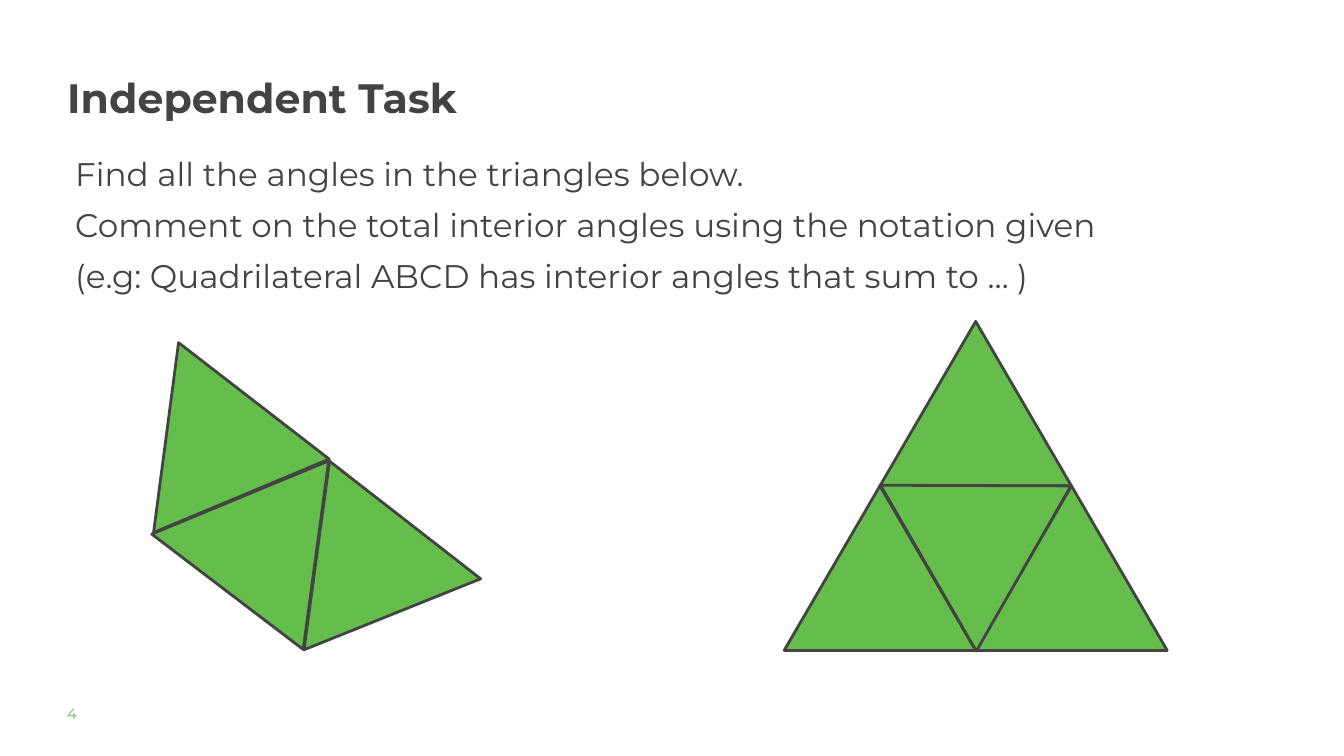
import dataclasses

import pptx
import pptx.dml.color
import pptx.enum.shapes
import pptx.util

Cm = pptx.util.Cm
Pt = pptx.util.Pt
RGB = pptx.dml.color.RGBColor


@dataclasses.dataclass(frozen=True)
class Theme:
    font: str = "Montserrat"
    dark: RGB = RGB(0x43, 0x43, 0x43)
    green: RGB = RGB(0x65, 0xBE, 0x4B)
    title: int = 44
    body: int = 35
    number: int = 16
    outline: int = 3


THEME = Theme()
SIDE = 7.24
HEIGHT = 6.22


def add_text(s, box, text, size, color, bold=False, spacing=1.0, inset=(0, 0)):
    tf = s.shapes.add_textbox(*(Cm(v) for v in box)).text_frame
    tf.word_wrap = True
    tf.margin_left = tf.margin_right = Cm(inset[0])
    tf.margin_top = tf.margin_bottom = Cm(inset[1])
    p = tf.paragraphs[0]
    p.text = text
    p.line_spacing = spacing
    for r in p.runs:
        r.font.name = THEME.font
        r.font.size = Pt(size)
        r.font.bold = bold
        r.font.color.rgb = color


def add_triangle(s, left, top, rotation=0):
    sp = s.shapes.add_shape(
        pptx.enum.shapes.MSO_SHAPE.ISOSCELES_TRIANGLE,
        Cm(left), Cm(top), Cm(SIDE), Cm(HEIGHT))
    sp.rotation = rotation
    sp.shadow.inherit = False
    sp.fill.solid()
    sp.fill.fore_color.rgb = THEME.green
    sp.line.color.rgb = THEME.dark
    sp.line.width = Pt(THEME.outline)


def add_trapezium(s):
    for left, top, rotation in ((5.74, 13.84, 97.5),
                                (9.78, 19.0, 217.9),
                                (6.65, 18.57, 157.5)):
        add_triangle(s, left, top, rotation)


def add_large_triangle(s, left, top):
    middle = left + SIDE / 2
    base = top + HEIGHT
    add_triangle(s, middle, top)
    add_triangle(s, left + SIDE, base)
    add_triangle(s, left, base)
    add_triangle(s, middle + SIDE / 8, base - HEIGHT / 4, 60)


def main():
    prs = pptx.Presentation()
    prs.slide_width = Cm(50.8)
    prs.slide_height = Cm(28.58)
    s = prs.slides.add_slide(prs.slide_layouts[6])

    add_text(s, (2.54, 2.46, 36.68, 4.52), "Independent Task",
             THEME.title, THEME.dark, bold=True, spacing=1.15)
    add_text(s, (2.54, 26.62, 3.99, 0.99), "4", THEME.number, THEME.green)
    add_trapezium(s)
    add_large_triangle(s, 29.64, 12.15)
    add_text(s, (2.59, 5.26, 41.43, 5.92),
             "Find all the angles in the triangles below.\v"
             "Comment on the total interior angles using the notation given "
             "(e.g: Quadrilateral ABCD has interior angles that sum to … )",
             THEME.body, THEME.dark, spacing=1.3, inset=(0.25, 0.13))

    prs.save("out.pptx")


if __name__ == "__main__":
    main()
